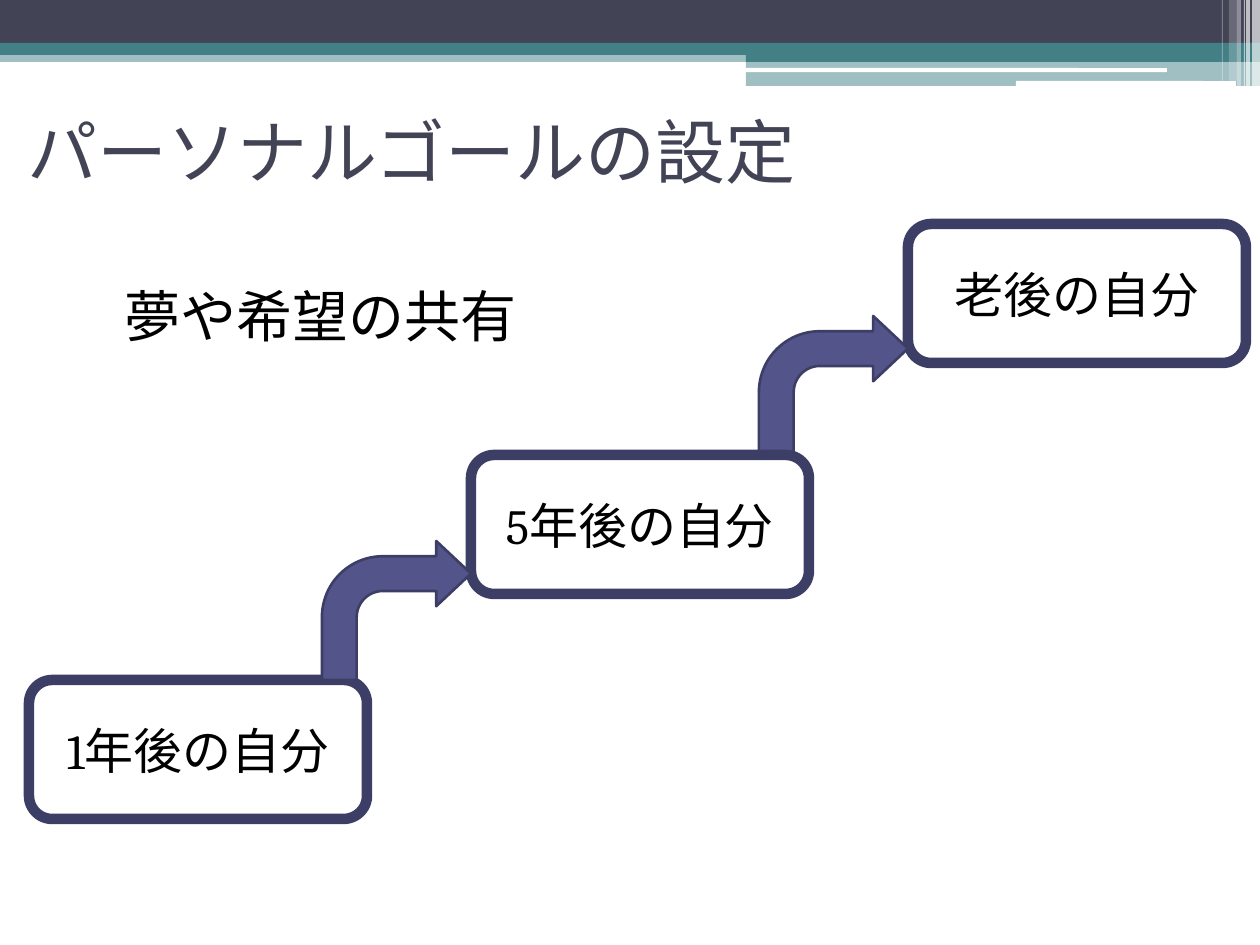
from lxml.etree import SubElement
from pptx import Presentation
from pptx.dml.color import RGBColor
from pptx.enum.shapes import MSO_SHAPE as Shape
from pptx.enum.text import MSO_ANCHOR as Anchor, MSO_AUTO_SIZE as AutoSize, PP_ALIGN as Align
from pptx.oxml.ns import qn
from pptx.util import Pt

EMU_PER_PX = 914400 / 126
DARK, TEAL, WHITE, BLACK = "424456", "438086", "FFFFFF", "000000"
PURPLE, OUTLINE = "53548A", "3D3E66"
GOAL_WIDTH, STEP_HEIGHT, ARROW_WIDTH = 338, 139, 149


def px(*lengths):
    return [round(length * EMU_PER_PX) for length in lengths]


def color(value):
    return RGBColor.from_string(value)


def write(frame, text, size, font="Cambria", fill=BLACK, align=Align.LEFT,
          anchor=Anchor.MIDDLE, wrap=True, auto_size=AutoSize.NONE):
    frame.auto_size = auto_size
    frame.word_wrap = wrap
    frame.vertical_anchor = anchor
    paragraph = frame.paragraphs[0]
    paragraph.alignment = align
    run = paragraph.add_run()
    run.text = text
    run.font.name = font
    run.font.size = Pt(size)
    run.font.color.rgb = color(fill)


class SlideBuilder:
    def __init__(self, slide):
        self.slide = slide

    def shape(self, kind, box, fill=None, alpha=100, line=None, line_width=0):
        shape = self.slide.shapes.add_shape(kind, *px(*box))
        shape.shadow.inherit = False
        if fill:
            shape.fill.solid()
            shape.fill.fore_color.rgb = color(fill)
            if alpha < 100:
                solid = shape.fill._xPr.find(qn("a:solidFill"))
                SubElement(solid[0], qn("a:alpha")).set("val", str(alpha * 1000))
        else:
            shape.fill.background()
        if line:
            shape.line.color.rgb = color(line)
            shape.line.width = Pt(line_width)
        else:
            shape.line.fill.background()
        return shape

    def title(self, text, box):
        title = self.slide.shapes.title
        title.left, title.top, title.width, title.height = px(*box)
        write(title.text_frame, text, 40, font="Roboto", fill=DARK)

    def label(self, text, box):
        label = self.slide.shapes.add_textbox(*px(*box))
        write(label.text_frame, text, 32, anchor=Anchor.TOP, wrap=False,
              auto_size=AutoSize.SHAPE_TO_FIT_TEXT)

    def goal(self, text, left, top):
        goal = self.shape(Shape.ROUNDED_RECTANGLE, (left, top, GOAL_WIDTH, STEP_HEIGHT),
                          line=OUTLINE, line_width=6)
        write(goal.text_frame, text, 28, align=Align.CENTER)

    def arrow(self, right, bottom):
        box = (right - ARROW_WIDTH, bottom - STEP_HEIGHT, ARROW_WIDTH, STEP_HEIGHT)
        arrow = self.shape(Shape.BENT_ARROW, box, PURPLE, line=OUTLINE, line_width=1.5)
        for index, value in enumerate((0.25, 0.235, 0.25, 0.438)):
            arrow.adjustments[index] = value

    def header(self):
        bands = [
            ((0, 50, 1260, 12), TEAL, 50),
            ((0, 0, 1260, 43), DARK, 100),
            ((0, 43, 1260, 12), TEAL, 100),
            ((746, 49, 514, 13), TEAL, 100),
            ((746, 61, 514, 25), TEAL, 50),
        ]
        for box, fill, alpha in bands:
            self.shape(Shape.RECTANGLE, box, fill, alpha)
        for box in ((745, 68, 422, 4), (1016, 81, 220, 5)):
            self.shape(Shape.ROUNDED_RECTANGLE, box, WHITE)
        stripes = [(1252, 8, 86, 65), (1246, 4, 86, 65), (1244, 1, 86, 60),
                   (1237, 4, 86, 40), (1229, 8, 81, 20), (1222, 1, 81, 30)]
        for left, width, height, alpha in stripes:
            self.shape(Shape.RECTANGLE, (left, 0, width, height), WHITE, alpha)


def main():
    presentation = Presentation()
    presentation.slide_width, presentation.slide_height = px(1260, 945)
    slide = presentation.slides.add_slide(presentation.slide_layouts[5])
    builder = SlideBuilder(slide)
    builder.header()
    builder.title("パーソナルゴールの設定", (15, 77, 1134, 147))
    one_year, five_years, old_age = (29, 680), (471, 455), (908, 224)
    builder.goal("老後の自分", *old_age)
    builder.arrow(old_age[0], five_years[1])
    builder.goal("5年後の自分", *five_years)
    builder.goal("1年後の自分", *one_year)
    builder.arrow(five_years[0], one_year[1])
    builder.label("夢や希望の共有", (112, 275, 421, 81))
    presentation.save("out.pptx")


if __name__ == "__main__":
    main()
